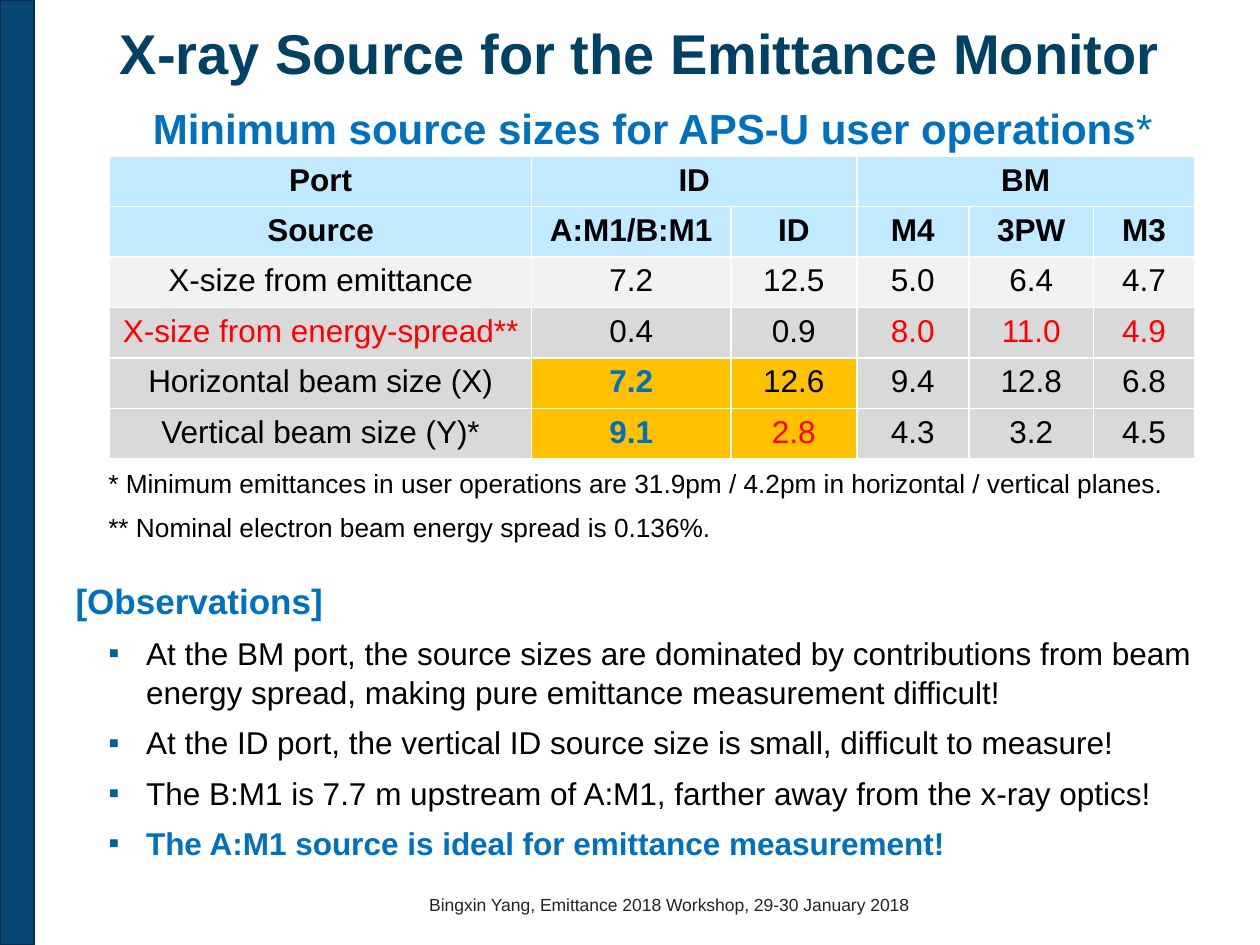
from pptx import Presentation
from pptx.util import Inches, Pt
from pptx.dml.color import RGBColor
from pptx.enum.shapes import MSO_SHAPE
from pptx.enum.text import MSO_ANCHOR, PP_ALIGN
from pptx.oxml.ns import qn
from lxml.etree import SubElement

ink = {
    "bar": "094875", "edge": "00304E", "title": "004165", "blue": "0070C0",
    "black": "000000", "red": "FF0000", "foot": "232425", "bullet": "006198",
    "head": "C1E9FF", "light": "F2F2F2", "grey": "D9D9D9", "gold": "FFC000",
}

deck = Presentation()
deck.slide_width, deck.slide_height = Inches(10), Inches(7.5)
col, row = deck.slide_width / 100, deck.slide_height / 100
slide = deck.slides.add_slide(deck.slide_layouts[6])
shapes = slide.shapes


def style(para, size, color, bold=False, align=PP_ALIGN.LEFT):
    para.alignment = align
    font = para.font
    font.name, font.size, font.bold = "Arial", Pt(size), bold
    font.color.rgb = RGBColor.from_string(ink[color])


def add_text(x, y, w, h, lines, base=0.05, anchor=MSO_ANCHOR.TOP):
    box = shapes.add_textbox(int(x * col), int(y * row), int(w * col), int(h * row))
    frame = box.text_frame
    frame.word_wrap, frame.vertical_anchor = True, anchor
    frame.margin_left = frame.margin_top = frame.margin_right = 0
    frame.margin_bottom = Inches(base)
    for i, (text, *look) in enumerate(lines):
        para = frame.add_paragraph() if i else frame.paragraphs[0]
        para.add_run().text = text
        style(para, *look)
        if anchor == MSO_ANCHOR.TOP:
            para.space_after, para.line_spacing = Pt(6), 1.05
    return frame.paragraphs


bar = shapes.add_shape(MSO_SHAPE.RECTANGLE, 0, 0, int(2.7 * col), deck.slide_height)
bar.shadow.inherit = False
bar.fill.solid()
bar.fill.fore_color.rgb = RGBColor.from_string(ink["bar"])
bar.line.color.rgb = RGBColor.from_string(ink["edge"])
bar.line.width = Pt(0.75)

mid = PP_ALIGN.CENTER
add_text(5, 1.6, 91.6, 7.87,
         [("X-ray Source for the Emittance Monitor", 32, "title", True, mid)],
         0, MSO_ANCHOR.MIDDLE)

rows = [
    ["Port", "ID", "", "BM", "", ""],
    ["Source", "A:M1/B:M1", "ID", "M4", "3PW", "M3"],
    ["X-size from emittance", "7.2", "12.5", "5.0", "6.4", "4.7"],
    ["X-size from energy-spread**", "0.4", "0.9", "8.0", "11.0", "4.9"],
    ["Horizontal beam size (X)", "7.2", "12.6", "9.4", "12.8", "6.8"],
    ["Vertical beam size (Y)*", "9.1", "2.8", "4.3", "3.2", "4.5"],
]
fills = ["head", "head", "light", "grey", "grey", "grey"]
wide = [33.5, 15.8, 10, 8.9, 9.9, 8]
tall = 5.07
reds = {(3, 0), (3, 3), (3, 4), (3, 5), (5, 2)}
blues = {(4, 1), (5, 1)}
golds = blues | {(4, 2), (5, 2)}

table = shapes.add_table(len(rows), len(wide), int(8.7 * col), int(16.53 * row),
                         int(sum(wide) * col), int(tall * len(rows) * row)).table
for part, share in zip(table.columns, wide):
    part.width = int(share * col)
for part in table.rows:
    part.height = int(tall * row)
table.cell(0, 1).merge(table.cell(0, 2))
table.cell(0, 3).merge(table.cell(0, 5))
for r, line in enumerate(rows):
    for c, text in enumerate(line):
        cell, spot = table.cell(r, c), (r, c)
        cell.fill.solid()
        shade = "gold" if spot in golds else fills[r]
        cell.fill.fore_color.rgb = RGBColor.from_string(ink[shade])
        if cell.is_spanned:
            continue
        cell.text = text
        color = "red" if spot in reds else "blue" if spot in blues else "black"
        style(cell.text_frame.paragraphs[0], 18, color, r < 2 or spot in blues, mid)

add_text(15.8, 94.13, 74.6, 3.2,
         [("Bingxin Yang, Emittance 2018 Workshop, 29-30 January 2018",
           10, "foot", False, mid)], 0, MSO_ANCHOR.MIDDLE)

lead = add_text(6, 10.53, 91.6, 6.67,
                [("Minimum source sizes for APS-U user operations",
                  24, "blue", True, mid)])[0]
star = lead.add_run()
star.text, star.font.bold = "*", False

points = add_text(6, 61.07, 91.6, 29.47, [
    ("[Observations]", 20, "blue", True),
    ("At the BM port, the source sizes are dominated by contributions from beam "
     "energy spread, making pure emittance measurement difficult!", 18, "black"),
    ("At the ID port, the vertical ID source size is small, difficult to measure!",
     18, "black"),
    ("The B:M1 is 7.7 m upstream of A:M1, farther away from the x-ray optics!",
     18, "black"),
    ("The A:M1 source is ideal for emittance measurement!", 18, "blue", True),
])
for para in points[1:]:
    props = para._p.get_or_add_pPr()
    props.set("marL", str(int(5.6 * col)))
    props.set("indent", str(int(-3 * col)))
    mark = SubElement(props, qn("a:buClr"))
    SubElement(mark, qn("a:srgbClr")).set("val", ink["bullet"])
    SubElement(props, qn("a:buFont")).set("typeface", "Arial")
    SubElement(props, qn("a:buChar")).set("char", "▪")
    props.append(props.find(qn("a:defRPr")))

add_text(8.6, 49.33, 86.2, 8.13, [
    ("* Minimum emittances in user operations are 31.9pm / 4.2pm "
     "in horizontal / vertical planes.", 15, "black"),
    ("** Nominal electron beam energy spread is 0.136%.", 15, "black"),
])

deck.save("out.pptx")
